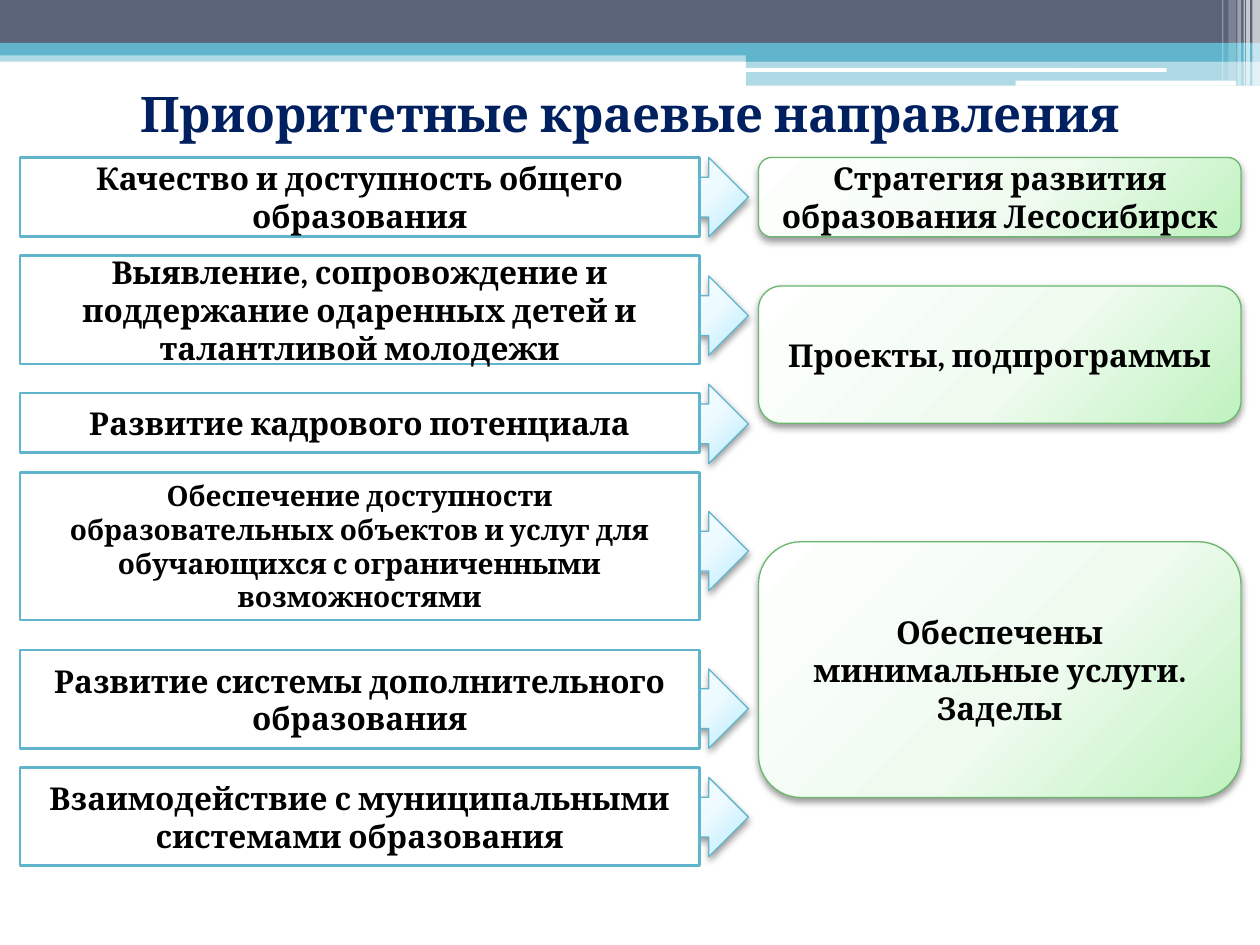
import lxml.etree
import pptx
import pptx.dml.color
import pptx.enum.shapes
import pptx.enum.text
import pptx.oxml
import pptx.oxml.ns
import pptx.util

Inches = pptx.util.Inches
Pt = pptx.util.Pt
KIND = pptx.enum.shapes.MSO_SHAPE
qn = pptx.oxml.ns.qn

FONT = "Cambria"
BLUE, SLATE, WHITE, GREEN = "60B5CC", "5A6378", "FFFFFF", "6BB76D"
BLACK, NAVY = "000000", "002060"
ICE = [(0, "FEFFFF"), (55, "EDFAFF"), (100, "B7EBFF")]
MINT = [(0, "FEFFFE"), (55, "F0FBF0"), (100, "BFF2BF")]

# top, height, arrow top, text size, text
GOALS = [
    (1.25, 0.63, 1.25, 18, "Качество и доступность общего образования"),
    (2.03, 0.86, 2.19, 18, "Выявление, сопровождение и поддержание "
     "одаренных детей и талантливой молодежи"),
    (3.12, 0.47, 3.05, 18, "Развитие кадрового потенциала"),
    (3.75, 1.17, 4.06, 16, "Обеспечение доступности образовательных объектов "
     "и услуг для обучающихся с ограниченными возможностями"),
    (5.16, 0.78, 5.31, 18, "Развитие системы дополнительного образования"),
    (6.09, 0.78, 6.17, 18,
     "Взаимодействие с муниципальными системами образования"),
]
# top, height, text
MEANS = [
    (1.25, 0.63, "Стратегия развития образования Лесосибирск"),
    (2.27, 1.09, "Проекты, подпрограммы"),
    (4.3, 2.03, "Обеспечены минимальные услуги. Заделы"),
]
# left, top, width, height, colour, opacity
BANDS = [
    (0, 0.4, 10, 0.09, BLUE, 50),
    (0, 0, 10, 0.34, SLATE, 100),
    (0, 0.34, 10, 0.1, BLUE, 100),
    (5.92, 0.39, 4.08, 0.1, BLUE, 100),
    (5.92, 0.48, 4.08, 0.2, BLUE, 50),
]
PILLS = [(5.91, 0.54, 3.35, 0.03), (8.06, 0.64, 1.75, 0.04)]
# left, width, height, opacity
STRIPES = [
    (9.94, 0.06, 0.68, 65), (9.89, 0.03, 0.68, 65), (9.87, 0.01, 0.68, 60),
    (9.82, 0.03, 0.68, 40), (9.75, 0.06, 0.64, 20), (9.7, 0.01, 0.64, 30),
]


def rgb(code):
    return pptx.dml.color.RGBColor.from_string(code)


def node(parent, tag, **attrs):
    return lxml.etree.SubElement(parent, qn(tag), attrs)


def tint(parent, code, alpha=100):
    color = node(parent, "a:srgbClr", val=code)
    if alpha < 100:
        node(color, "a:alpha", val=str(alpha * 1000))


def shape(slide, kind, left, top, width, height, fill=WHITE, alpha=100,
          line=None, weight=0.75):
    item = slide.shapes.add_shape(kind, Inches(left), Inches(top),
                                  Inches(width), Inches(height))
    item.shadow.inherit = False
    item.fill.solid()
    item.fill.fore_color.rgb = rgb(fill)
    if alpha < 100:
        color = item.fill.fore_color
        color = item.element.spPr.find(qn("a:solidFill"))[0]
        node(color, "a:alpha", val=str(alpha * 1000))
    if line:
        item.line.color.rgb = rgb(line)
        item.line.width = Pt(weight)
    else:
        item.line.fill.background()
    return item


def gloss(item, stops):
    """Give a shape a radial gradient and a soft shadow below it."""
    item.fill.gradient()
    grad = item.element.spPr.find(qn("a:gradFill"))
    for child in list(grad):
        grad.remove(child)
    ramp = node(grad, "a:gsLst")
    for pos, code in stops:
        tint(node(ramp, "a:gs", pos=str(pos * 1000)), code)
    node(node(grad, "a:path", path="circle"), "a:fillToRect",
         l="-40000", t="-90000", r="140000", b="190000")
    shade = node(item.element.spPr.find(qn("a:effectLst")), "a:outerShdw",
                 blurRad=str(Pt(4.1)), dist=str(Pt(2)), dir="5400000",
                 rotWithShape="0")
    tint(shade, BLACK, 40)


def write(item, text, size=18, color=BLACK):
    frame = item.text_frame
    frame.word_wrap = True
    frame.vertical_anchor = pptx.enum.text.MSO_ANCHOR.MIDDLE
    para = frame.paragraphs[0]
    para.alignment = pptx.enum.text.PP_ALIGN.CENTER
    run = para.add_run()
    run.text = text
    run.font.name = FONT
    run.font.size = Pt(size)
    run.font.bold = True
    run.font.color.rgb = rgb(color)


def header(slide):
    for left, top, width, height, code, alpha in BANDS:
        shape(slide, KIND.RECTANGLE, left, top, width, height, code, alpha)
    for box in PILLS:
        shape(slide, KIND.ROUNDED_RECTANGLE, *box)
    for left, width, height, alpha in STRIPES:
        shape(slide, KIND.RECTANGLE, left, 0, width, height, alpha=alpha)


def title(slide, left, top, width, height):
    box = slide.shapes.add_textbox(Inches(left), Inches(top),
                                   Inches(width), Inches(height))
    write(box, "Приоритетные краевые направления", size=28, color=NAVY)


def arrows(slide, left, width, height):
    for _, _, top, _, _ in GOALS:
        item = shape(slide, KIND.NOTCHED_RIGHT_ARROW, left, top, width,
                     height, line=BLUE)
        gloss(item, ICE)


def means(slide, left, width):
    for top, height, text in MEANS:
        item = shape(slide, KIND.FLOWCHART_ALTERNATE_PROCESS, left, top,
                     width, height, line=GREEN)
        gloss(item, MINT)
        write(item, text)


def goals(slide, left, width):
    for top, height, _, size, text in GOALS:
        item = shape(slide, KIND.RECTANGLE, left, top, width, height,
                     line=BLUE, weight=1.5)
        write(item, text, size=size)


def main():
    deck = pptx.Presentation()
    deck.slide_width, deck.slide_height = Inches(10), Inches(7.5)
    slide = deck.slides.add_slide(deck.slide_layouts[6])
    header(slide)
    arrows(slide, 5.16, 0.78, 0.63)
    means(slide, 6.02, 3.83)
    title(slide, 0, 0.55, 10, 0.7)
    goals(slide, 0.16, 5.39)
    deck.save("out.pptx")


if __name__ == "__main__":
    main()
